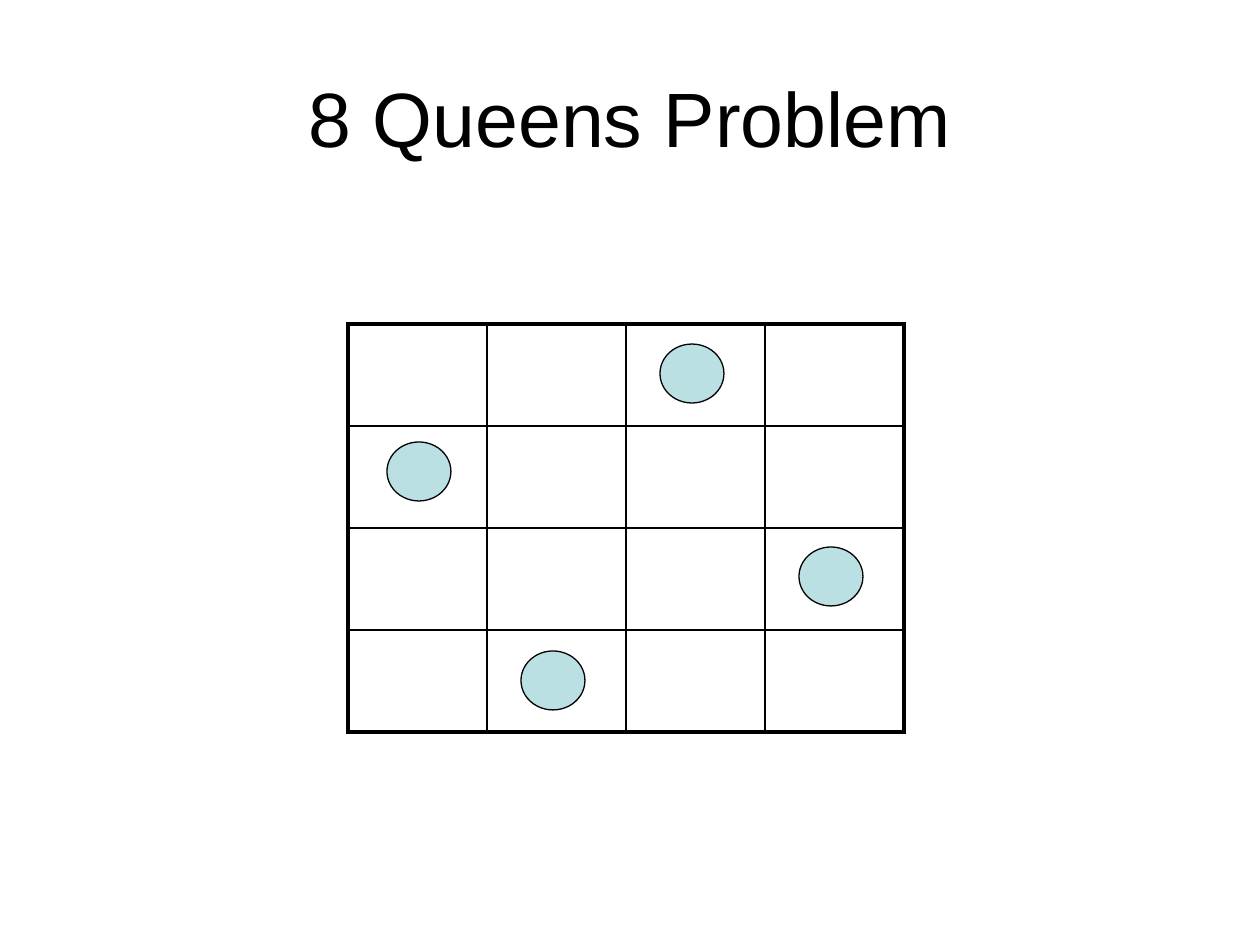
from dataclasses import dataclass

from lxml.etree import SubElement
from pptx import Presentation
from pptx.dml.color import RGBColor
from pptx.enum.shapes import MSO_SHAPE
from pptx.enum.text import MSO_ANCHOR, PP_ALIGN
from pptx.oxml.ns import qn
from pptx.util import Emu, Pt


@dataclass(frozen=True)
class Theme:
    font: str = "Arial"
    title_size: Pt = Pt(44)
    ink: RGBColor = RGBColor(0x00, 0x00, 0x00)
    paper: RGBColor = RGBColor(0xFF, 0xFF, 0xFF)
    queen: RGBColor = RGBColor(0xBB, 0xE0, 0xE3)
    outer_line: Pt = Pt(2.25)
    inner_line: Pt = Pt(1)
    queen_line: Pt = Pt(0.75)


theme = Theme()


def px(count):
    return Emu(round(count * 914400 / 126))


def set_border(cell, side, width):
    line = SubElement(cell._tc.get_or_add_tcPr(), qn(f"a:{side}"), w=str(width))
    fill = SubElement(line, qn("a:solidFill"))
    SubElement(fill, qn("a:srgbClr"), val=str(theme.ink))


deck = Presentation()
deck.slide_width, deck.slide_height = px(1260), px(945)
page = deck.slides.add_slide(deck.slide_layouts[6])
page.background.fill.solid()
page.background.fill.fore_color.rgb = theme.paper

# Title
box = page.shapes.add_textbox(px(63), px(38), px(1134), px(158))
box.text_frame.word_wrap = True
box.text_frame.vertical_anchor = MSO_ANCHOR.MIDDLE
para = box.text_frame.paragraphs[0]
para.alignment = PP_ALIGN.CENTER
span = para.add_run()
span.text = "8 Queens Problem"
span.font.name = theme.font
span.font.size = theme.title_size
span.font.color.rgb = theme.ink

# Board: thick outer frame, thin inner lines
size = 4
left, top, column_width, row_height = 348, 324, 139, 102
frame = page.shapes.add_table(
    size, size, px(left), px(top), px(size * column_width), px(size * row_height))
board = frame.table
board.first_row = board.horz_banding = False
for column in board.columns:
    column.width = px(column_width)
for row in board.rows:
    row.height = px(row_height)

last = size - 1
for row in range(size):
    for column in range(size):
        cell = board.cell(row, column)
        edges = {"lnL": column == 0, "lnR": column == last,
                 "lnT": row == 0, "lnB": row == last}
        for side, is_outer in edges.items():
            set_border(cell, side, theme.outer_line if is_outer else theme.inner_line)
        cell.fill.background()

# Queens: left and top of each
queens = [(521, 651), (799, 547), (387, 442), (660, 344)]
for queen_left, queen_top in queens:
    queen = page.shapes.add_shape(
        MSO_SHAPE.OVAL, px(queen_left), px(queen_top), px(64), px(59))
    queen.shadow.inherit = False
    queen.fill.solid()
    queen.fill.fore_color.rgb = theme.queen
    queen.line.color.rgb = theme.ink
    queen.line.width = theme.queen_line

deck.save("out.pptx")
